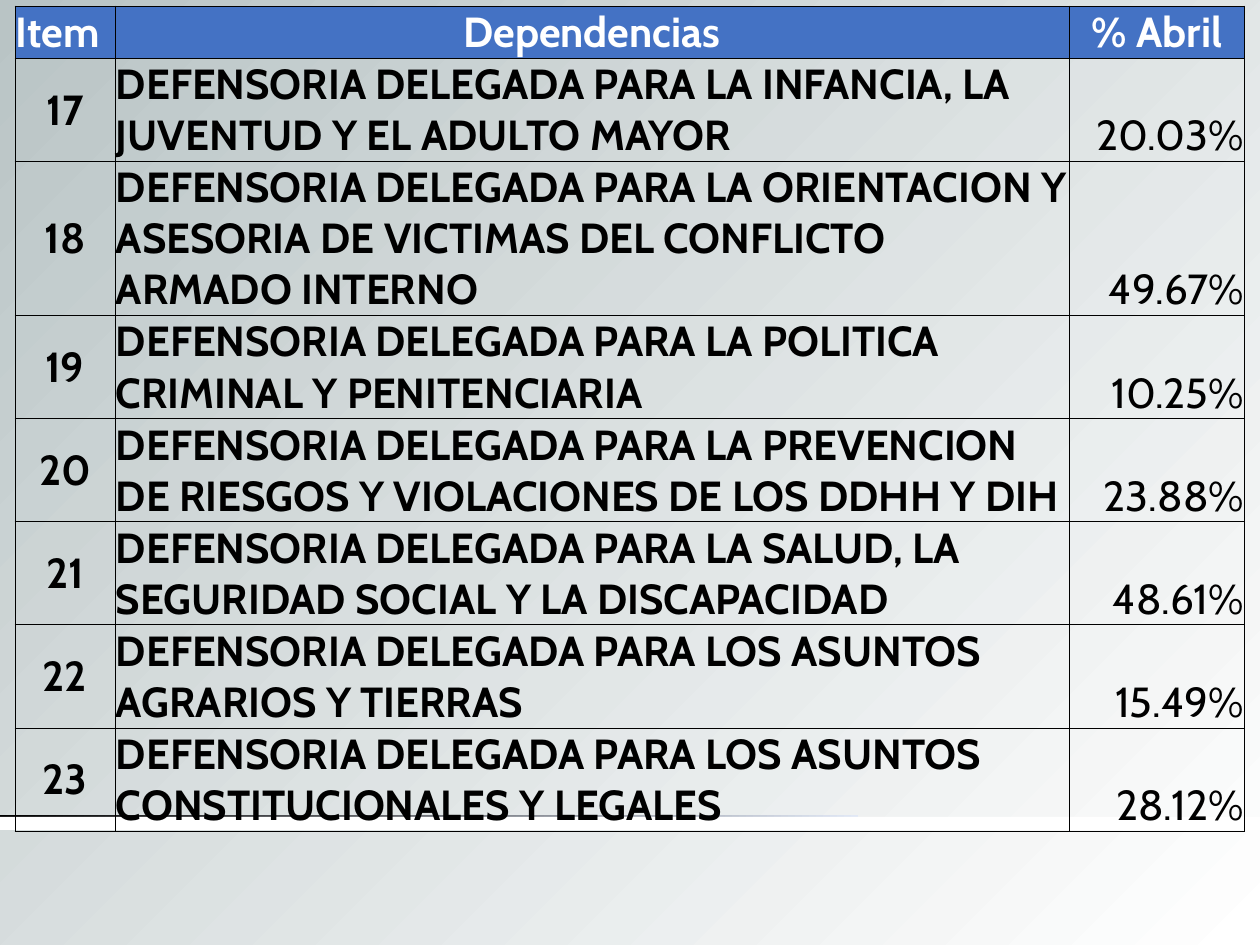
from dataclasses import dataclass

from lxml import etree
from pptx import Presentation
from pptx.dml.color import RGBColor
from pptx.enum.shapes import MSO_SHAPE
from pptx.enum.text import MSO_ANCHOR, PP_ALIGN
from pptx.oxml import parse_xml
from pptx.oxml.ns import nsdecls, qn
from pptx.util import Emu, Pt

RECTANGLE = MSO_SHAPE.RECTANGLE
MIDDLE, BOTTOM = MSO_ANCHOR.MIDDLE, MSO_ANCHOR.BOTTOM
LEFT, CENTER, RIGHT = PP_ALIGN.LEFT, PP_ALIGN.CENTER, PP_ALIGN.RIGHT
BLANK_LAYOUT = 6
PX_PER_INCH = 126


@dataclass(frozen=True)
class Theme:
    font: str = "Cabin"
    text_size: int = 24
    border_width: float = 0.5
    white: str = "FFFFFF"
    black: str = "000000"
    mist: str = "B9C4C5"
    pale_blue: str = "E1E8F5"
    header_blue: str = "4472C4"


THEME = Theme()
HEADER = ("Item", "Dependencias", "% Abril")
HEADER_STYLE = ((LEFT, BOTTOM, True), (CENTER, MIDDLE, True), (CENTER, MIDDLE, True))
BODY_STYLE = ((CENTER, MIDDLE, True), (LEFT, MIDDLE, True), (RIGHT, BOTTOM, False))
FIRST_ITEM = 17
DEPENDENCIES = (
    ("DEFENSORIA DELEGADA PARA LA INFANCIA, LA JUVENTUD Y EL ADULTO MAYOR", "20.03%", 2),
    ("DEFENSORIA DELEGADA PARA LA ORIENTACION Y ASESORIA DE VICTIMAS DEL "
     "CONFLICTO ARMADO INTERNO", "49.67%", 3),
    ("DEFENSORIA DELEGADA PARA LA POLITICA CRIMINAL Y PENITENCIARIA", "10.25%", 2),
    ("DEFENSORIA DELEGADA PARA LA PREVENCION DE RIESGOS Y VIOLACIONES DE LOS "
     "DDHH Y DIH", "23.88%", 2),
    ("DEFENSORIA DELEGADA PARA LA SALUD, LA SEGURIDAD SOCIAL Y LA DISCAPACIDAD",
     "48.61%", 2),
    ("DEFENSORIA DELEGADA PARA LOS ASUNTOS AGRARIOS Y TIERRAS", "15.49%", 2),
    ("DEFENSORIA DELEGADA PARA LOS ASUNTOS CONSTITUCIONALES Y LEGALES", "28.12%", 2),
)
COLUMN_WIDTHS = (100, 954, 176)
LINE_HEIGHT = 51
CELL_INSET = 1


def px(length):
    return Emu(round(length * 914400 / PX_PER_INCH))


def rgb(color):
    return RGBColor.from_string(color)


def set_gradient(fill, start, end):
    fill.gradient()
    for stop, color in zip(fill.gradient_stops, (start, end)):
        stop.color.rgb = rgb(color)


def paint_background(slide):
    set_gradient(slide.background.fill, THEME.white, THEME.mist)
    linear = next(slide.element.iter(qn("a:lin")))
    radial = parse_xml(
        f'<a:path {nsdecls("a")} path="circle">'
        '<a:fillToRect l="100000" t="100000"/></a:path>'
    )
    linear.getparent().replace(linear, radial)


def add_bar(slide, left, top, width, height):
    bar = slide.shapes.add_shape(RECTANGLE, px(left), px(top), px(width), px(height))
    bar.shadow.inherit = False
    bar.line.fill.background()
    return bar


def add_footer_rule(slide, left, top, width):
    fade = add_bar(slide, left, top, 858, 6)
    set_gradient(fade.fill, THEME.black, THEME.pale_blue)
    fade.fill.gradient_angle = 0
    band = add_bar(slide, left, top + 2, width, 13)
    band.fill.solid()
    band.fill.fore_color.rgb = rgb(THEME.white)


def add_borders(cell):
    properties = cell._tc.get_or_add_tcPr()
    for position, side in enumerate(("lnL", "lnR", "lnT", "lnB")):
        border = etree.Element(qn(f"a:{side}"), w=str(Pt(THEME.border_width)))
        color_fill = etree.SubElement(border, qn("a:solidFill"))
        etree.SubElement(color_fill, qn("a:srgbClr"), val=THEME.black)
        properties.insert(position, border)


def fill_cell(cell, text, style, color, background=None):
    alignment, anchor, bold = style
    cell.margin_left = cell.margin_right = cell.margin_top = px(CELL_INSET)
    cell.margin_bottom = 0
    cell.vertical_anchor = anchor
    if background:
        cell.fill.solid()
        cell.fill.fore_color.rgb = rgb(background)
    else:
        cell.fill.background()
    add_borders(cell)
    paragraph = cell.text_frame.paragraphs[0]
    paragraph.text = text
    paragraph.alignment = alignment
    font = paragraph.runs[0].font
    font.name = THEME.font
    font.size = Pt(THEME.text_size)
    font.bold = bold
    font.color.rgb = rgb(color)


def add_dependency_table(slide, left, top):
    heights = [CELL_INSET + LINE_HEIGHT * lines
               for lines in (1, *(lines for _, _, lines in DEPENDENCIES))]
    table = slide.shapes.add_table(
        len(heights), len(COLUMN_WIDTHS), px(left), px(top),
        px(sum(COLUMN_WIDTHS)), px(sum(heights)),
    ).table
    table.horz_banding = False
    for column, width in zip(table.columns, COLUMN_WIDTHS):
        column.width = px(width)
    for row, height in zip(table.rows, heights):
        row.height = px(height)
    for cell, text, style in zip(table.rows[0].cells, HEADER, HEADER_STYLE):
        fill_cell(cell, text, style, THEME.white, THEME.header_blue)
    for index, (name, percentage, _) in enumerate(DEPENDENCIES):
        values = (str(FIRST_ITEM + index), name, percentage)
        for cell, text, style in zip(table.rows[index + 1].cells, values, BODY_STYLE):
            fill_cell(cell, text, style, THEME.black)


def main():
    presentation = Presentation()
    presentation.slide_width = px(1260)
    presentation.slide_height = px(945)
    slide = presentation.slides.add_slide(presentation.slide_layouts[BLANK_LAYOUT])
    paint_background(slide)
    add_footer_rule(slide, 0, 815, 1260)
    add_dependency_table(slide, 15, 6)
    presentation.save("out.pptx")


if __name__ == "__main__":
    main()
